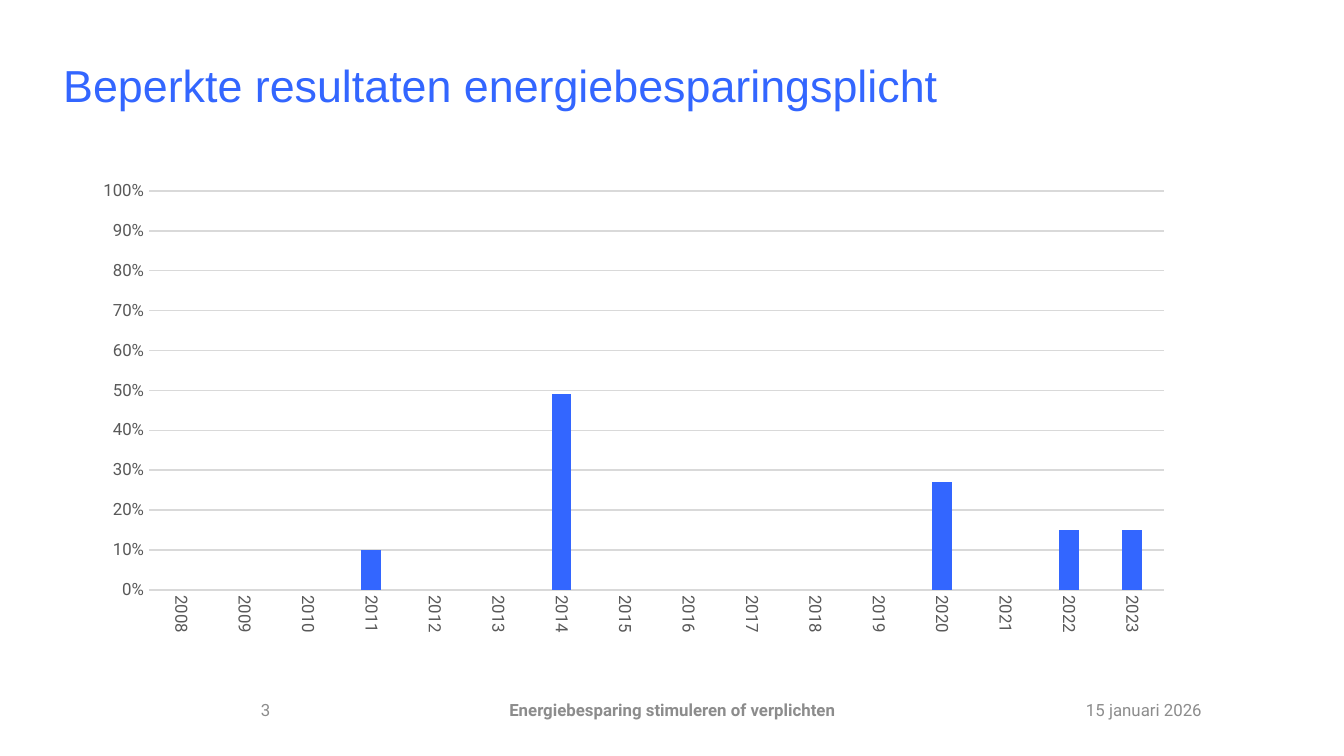
from typing import NamedTuple

from lxml.etree import SubElement
from pptx import Presentation
from pptx.chart.data import CategoryChartData
from pptx.dml.color import RGBColor
from pptx.enum.chart import XL_CHART_TYPE, XL_TICK_MARK
from pptx.enum.text import MSO_ANCHOR, PP_ALIGN
from pptx.oxml.ns import qn
from pptx.util import Inches, Pt

BLUE = "3366FF"
FOOTER_GREY = "8C8C8C"
LABEL_GREY = "595959"
LINE_GREY = "D9D9D9"
BODY_FONT = "Roboto"

YEARS = range(2008, 2024)
SAVINGS = {2011: 0.1, 2014: 0.49, 2020: 0.27, 2022: 0.15, 2023: 0.15}
PLOT_AREA = {"x": 0.075, "y": 0.076, "w": 0.884, "h": 0.773}


class FooterItem(NamedTuple):
    text: str
    left: float
    width: float
    alignment: PP_ALIGN
    bold: bool = False


FOOTER = [
    FooterItem("15 januari 2026", 6.69, 2.25, PP_ALIGN.RIGHT),
    FooterItem("Energiebesparing stimuleren of verplichten", 3.31, 3.38, PP_ALIGN.CENTER, True),
    FooterItem("3", 1.62, 0.39, PP_ALIGN.RIGHT),
]


def color(value: str) -> RGBColor:
    return RGBColor.from_string(value)


def style_font(font, name: str, size: float, hex_color: str, bold: bool = False) -> None:
    font.name = name
    font.size = Pt(size)
    font.bold = bold
    font.color.rgb = color(hex_color)


def style_line(line) -> None:
    line.color.rgb = color(LINE_GREY)
    line.width = Pt(0.75)


def prepare_frame(shape, anchor: MSO_ANCHOR):
    """Remove the margins, wrap and anchor the text; return the text frame."""
    frame = shape.text_frame
    frame.margin_left = frame.margin_right = frame.margin_top = frame.margin_bottom = 0
    frame.word_wrap = True
    frame.vertical_anchor = anchor
    return frame


def add_title(slide, text: str) -> None:
    title = slide.shapes.title
    title.left, title.top = Inches(0.47), Inches(0.45)
    title.width, title.height = Inches(9.06), Inches(0.39)
    frame = prepare_frame(title, MSO_ANCHOR.MIDDLE)
    frame.text = text
    paragraph = frame.paragraphs[0]
    paragraph.alignment = PP_ALIGN.LEFT
    paragraph.line_spacing = 0.95
    style_font(paragraph.runs[0].font, "Arial", 24, BLUE)


def add_footer_item(slide, item: FooterItem) -> None:
    box = slide.shapes.add_textbox(
        Inches(item.left), Inches(5.21), Inches(item.width), Inches(0.3)
    )
    frame = prepare_frame(box, MSO_ANCHOR.TOP)
    frame.text = item.text
    paragraph = frame.paragraphs[0]
    paragraph.alignment = item.alignment
    style_font(paragraph.runs[0].font, BODY_FONT, 9, FOOTER_GREY, item.bold)


def set_plot_layout(chart) -> None:
    """Fix the inner plot area as fractions of the chart."""
    plot_area = chart.element.find(".//" + qn("c:plotArea"))
    layout = plot_area.find(qn("c:layout"))
    if layout is None:
        layout = SubElement(plot_area, qn("c:layout"))
        plot_area.insert(0, layout)
    manual = SubElement(layout, qn("c:manualLayout"))
    SubElement(manual, qn("c:layoutTarget")).set("val", "inner")
    for key in "xy":
        SubElement(manual, qn(f"c:{key}Mode")).set("val", "edge")
    for key, fraction in PLOT_AREA.items():
        SubElement(manual, qn(f"c:{key}")).set("val", str(fraction))


def add_savings_chart(slide) -> None:
    data = CategoryChartData(number_format="0%")
    data.categories = [str(year) for year in YEARS]
    data.add_series("Series 1", [SAVINGS.get(year) for year in YEARS])
    chart = slide.shapes.add_chart(
        XL_CHART_TYPE.COLUMN_CLUSTERED,
        Inches(0.47), Inches(1.13), Inches(8.54), Inches(3.84), data,
    ).chart
    chart.has_title = False
    chart.has_legend = False
    style_font(chart.font, BODY_FONT, 10, "000000")
    set_plot_layout(chart)

    plot = chart.plots[0]
    plot.vary_by_categories = False
    plot.gap_width = 219
    plot.overlap = -27
    fill = plot.series[0].format.fill
    fill.solid()
    fill.fore_color.rgb = color(BLUE)

    for axis in (chart.category_axis, chart.value_axis):
        axis.major_tick_mark = axis.minor_tick_mark = XL_TICK_MARK.NONE
        style_font(axis.tick_labels.font, BODY_FONT, 9, LABEL_GREY)

    years = chart.category_axis
    style_line(years.format.line)
    label_body = years._element.find(qn("c:txPr")).find(qn("a:bodyPr"))
    label_body.set("rot", "5400000")
    label_body.set("vert", "horz")

    shares = chart.value_axis
    shares.minimum_scale, shares.maximum_scale, shares.major_unit = 0, 1, 0.1
    shares.tick_labels.number_format = "0%"
    shares.tick_labels.number_format_is_linked = False
    shares.format.line.fill.background()
    style_line(shares.major_gridlines.format.line)


def main() -> None:
    presentation = Presentation()
    presentation.slide_width = Inches(10)
    presentation.slide_height = Inches(10 * 9 / 16)
    slide = presentation.slides.add_slide(presentation.slide_layouts[5])
    add_title(slide, "Beperkte resultaten energiebesparingsplicht")
    for item in FOOTER:
        add_footer_item(slide, item)
    add_savings_chart(slide)
    presentation.save("out.pptx")


if __name__ == "__main__":
    main()
